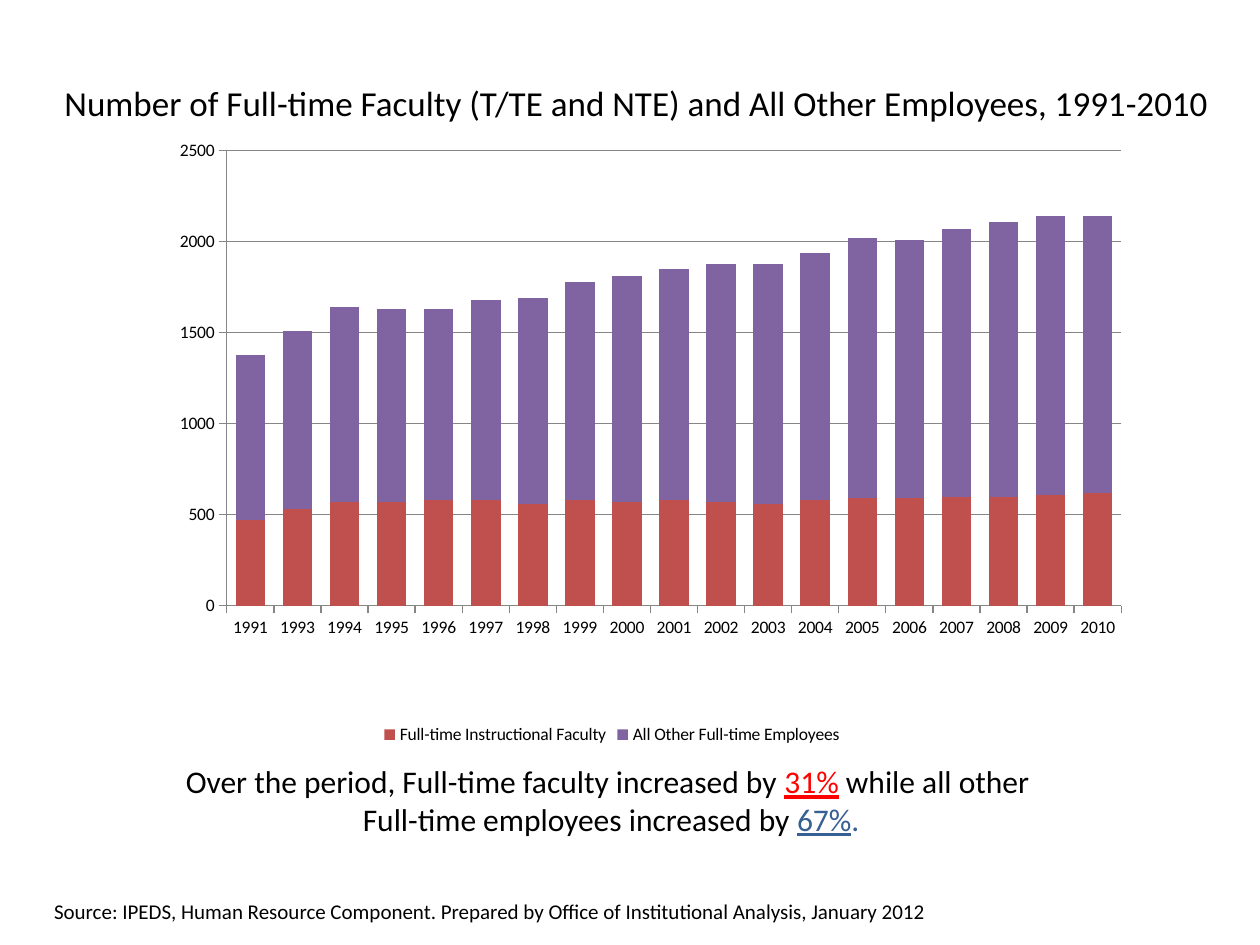
from lxml import etree
from pptx import Presentation
from pptx import util as u
from pptx.chart import data
from pptx.dml.color import RGBColor
from pptx.enum import chart as ch, text

BLACK = RGBColor(0, 0, 0)
GREY = RGBColor(0x86, 0x86, 0x86)
RED = RGBColor(0xFF, 0, 0)
BLUE = RGBColor(0x37, 0x60, 0x92)
BRICK = RGBColor(0xC0, 0x50, 0x4D)
PURPLE = RGBColor(0x80, 0x64, 0xA2)
FONT = "Calibri"

YEARS = ["1991"] + [str(year) for year in range(1993, 2011)]
STAFF = [
    ("Full-time Instructional Faculty", BRICK,
     [470, 530, 570, 570, 580, 580, 560, 580, 570, 580,
      570, 560, 580, 590, 590, 600, 600, 610, 620]),
    ("All Other Full-time Employees", PURPLE,
     [910, 980, 1070, 1060, 1050, 1100, 1130, 1200, 1240, 1270,
      1310, 1320, 1360, 1430, 1420, 1470, 1510, 1530, 1520]),
]
PLOT = {"x": 0.126, "y": 0.1, "w": 0.869, "h": 0.684}
TITLE = "Number of Full-time Faculty (T/TE and NTE) and All Other Employees, 1991-2010 "
SOURCE = ("Source: IPEDS, Human Resource Component. "
          "Prepared by Office of Institutional Analysis, January 2012")
FINDING = [
    [("Over the period, Full-time faculty increased by ", BLACK, False),
     ("31%", RED, True), (" while all other ", BLACK, False)],
    [("Full-time employees increased by ", BLACK, False),
     ("67%", BLUE, True), (".", BLUE, False)],
]


def add_text(slide, box, lines, size, align):
    """Place lines of (words, colour, underline) runs in the box."""
    frame = slide.shapes.add_textbox(*map(u.Cm, box)).text_frame
    frame.word_wrap = False
    frame.auto_size = text.MSO_AUTO_SIZE.SHAPE_TO_FIT_TEXT
    for i, line in enumerate(lines):
        para = frame.paragraphs[0] if i == 0 else frame.add_paragraph()
        para.alignment = align
        for words, color, under in line:
            run = para.add_run()
            run.text = words
            font = run.font
            font.name, font.size, font.underline = FONT, u.Pt(size), under
            font.color.rgb = color


def set_plot(chart):
    """Fix the inner plot area as fractions of the chart."""
    area = chart._chartSpace.chart.plotArea
    space = area.tag.split("}")[0] + "}"
    for old in area.findall(space + "layout"):
        area.remove(old)
    layout = etree.Element(space + "layout")
    area.insert(0, layout)
    manual = etree.SubElement(layout, space + "manualLayout")
    parts = [("layoutTarget", "inner"), ("xMode", "edge"), ("yMode", "edge")]
    for name, value in parts + list(PLOT.items()):
        etree.SubElement(manual, space + name).set("val", str(value))


def add_staff(slide, box):
    """Place the stacked columns of staff by year in the box."""
    table = data.CategoryChartData(number_format="General")
    table.categories = YEARS
    for name, _, counts in STAFF:
        table.add_series(name, counts)
    kind = ch.XL_CHART_TYPE.COLUMN_STACKED
    chart = slide.shapes.add_chart(kind, *map(u.Cm, box), table).chart
    chart.has_title = False
    chart.font.name, chart.font.size = FONT, u.Pt(10)
    chart.font.color.rgb = BLACK
    chart.has_legend = True
    chart.legend.position = ch.XL_LEGEND_POSITION.BOTTOM
    chart.legend.include_in_layout = False
    plot = chart.plots[0]
    plot.gap_width, plot.overlap, plot.vary_by_categories = 59, 100, False
    for series, (_, color, _) in zip(plot.series, STAFF):
        series.format.fill.solid()
        series.format.fill.fore_color.rgb = color
    scale = chart.value_axis
    scale.minimum_scale, scale.maximum_scale, scale.major_unit = 0, 2500, 500
    scale.has_major_gridlines = True
    for part in (scale, scale.major_gridlines, chart.category_axis):
        part.format.line.color.rgb = GREY
        part.format.line.width = u.Pt(0.75)
    for axis in (scale, chart.category_axis):
        axis.major_tick_mark = ch.XL_TICK_MARK.OUTSIDE
    set_plot(chart)


def main():
    """Build the slide and save it."""
    deck = Presentation()
    deck.slide_width, deck.slide_height = u.Cm(25.4), u.Cm(19.05)
    slide = deck.slides.add_slide(deck.slide_layouts[6])
    align = text.PP_ALIGN
    add_text(slide, (0.94, 1.52, 23.95, 1.12), [[(TITLE, BLACK, False)]], 20, align.CENTER)
    add_staff(slide, (1.96, 1.7, 20.75, 13.41))
    add_text(slide, (3.38, 15.24, 17.88, 1.8), FINDING, 18, align.CENTER)
    add_text(slide, (0.84, 17.98, 18.29, 0.76), [[(SOURCE, BLACK, False)]], 12, align.LEFT)
    deck.save("out.pptx")


if __name__ == "__main__":
    main()
